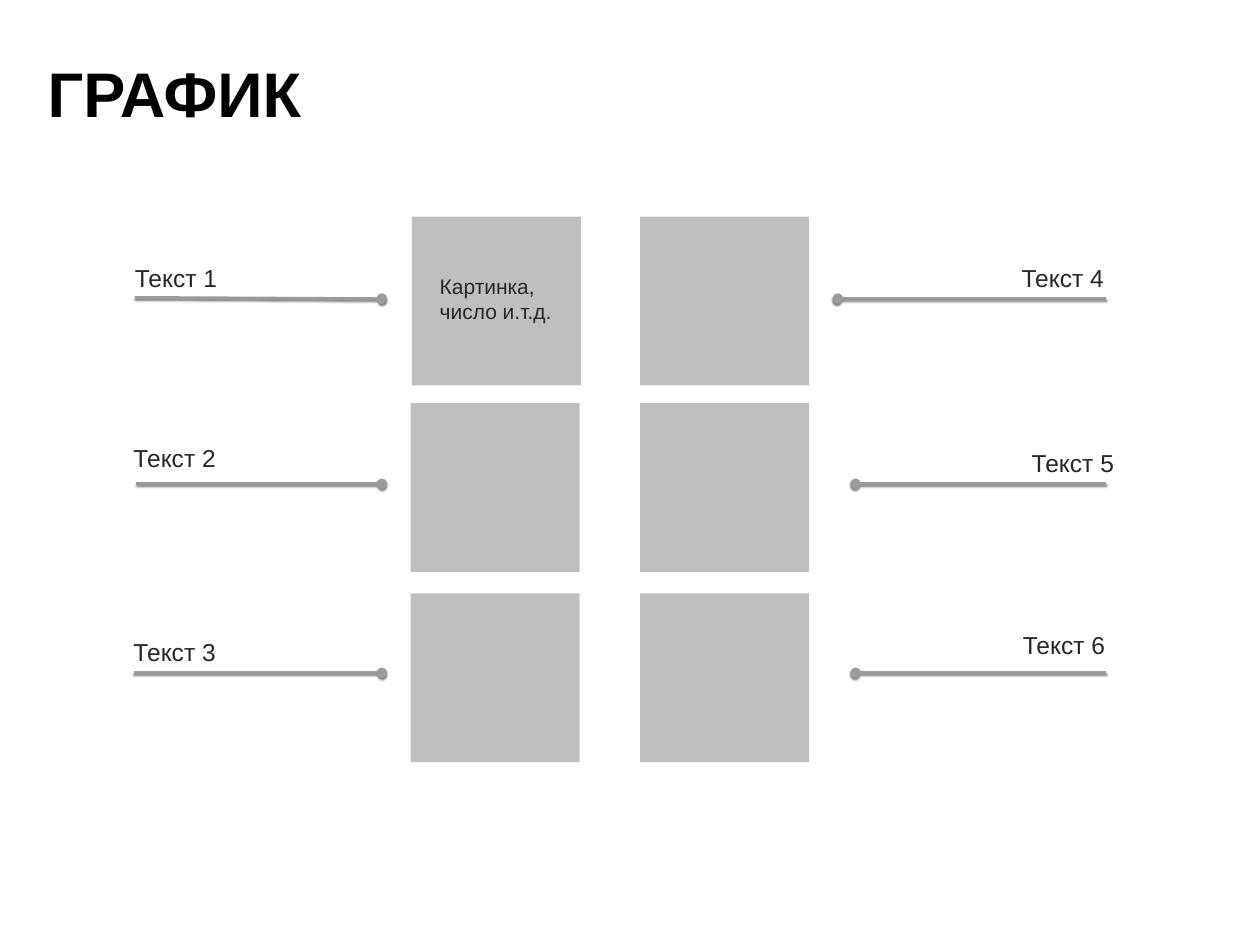
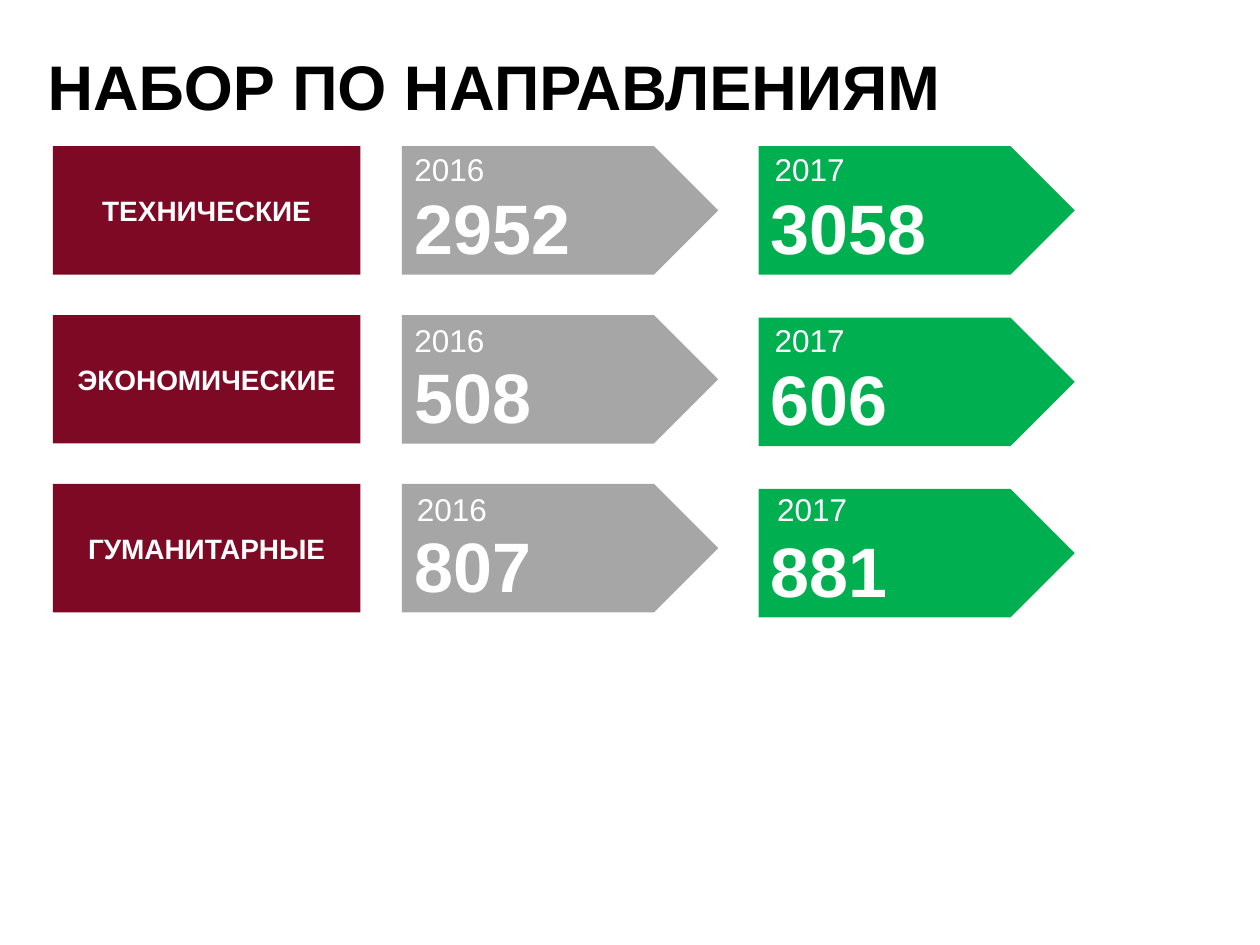
import pptx
import pptx.dml.color
import pptx.enum.shapes
import pptx.enum.text
import pptx.oxml
import pptx.util
from pptx.util import Inches

RGBColor = pptx.dml.color.RGBColor
BLACK = RGBColor(0x00, 0x00, 0x00)
WHITE = RGBColor(0xFF, 0xFF, 0xFF)
DARK_TEXT = RGBColor(0x26, 0x26, 0x26)
TILE_GRAY = RGBColor(0xBF, 0xBF, 0xBF)
LINE_GRAY = RGBColor(0x9B, 0x9B, 0x9B)
ARROW_GRAY = RGBColor(0xA6, 0xA6, 0xA6)
BURGUNDY = RGBColor(0x7D, 0x09, 0x25)
GREEN = RGBColor(0x00, 0xB0, 0x50)

SHAPES = pptx.enum.shapes.MSO_SHAPE
ALIGN = pptx.enum.text.PP_ALIGN
ANCHOR = pptx.enum.text.MSO_ANCHOR
NAMESPACE = 'xmlns:a="http://schemas.openxmlformats.org/drawingml/2006/main"'
OVAL_END = f'<a:tailEnd {NAMESPACE} type="oval"/>'
LINE_SHADOW = (
    f'<a:effectLst {NAMESPACE}>'
    '<a:outerShdw blurRad="12700" dist="12700" dir="5400000">'
    '<a:srgbClr val="000000"><a:alpha val="50000"/></a:srgbClr>'
    '</a:outerShdw></a:effectLst>'
)


class SlideBuilder:
    """Holds the shared style and the slide being drawn."""

    font_name = "Arial"
    title_size = 36
    title_left = 0.28

    def __init__(self, presentation):
        self.presentation = presentation
        self.slide = None

    def new_slide(self):
        blank_layout = self.presentation.slide_layouts[6]
        self.slide = self.presentation.slides.add_slide(blank_layout)

    def add_lines(self, frame, lines, size, color, bold=False, align=ALIGN.LEFT):
        for index, line in enumerate(lines):
            paragraph = frame.paragraphs[0] if index == 0 else frame.add_paragraph()
            paragraph.alignment = align
            run = paragraph.add_run()
            run.text = line
            run.font.name = self.font_name
            run.font.size = pptx.util.Pt(size)
            run.font.bold = bold
            run.font.color.rgb = color

    def text(self, left, top, width, height, lines, size, color, bold=False,
             align=ALIGN.LEFT, anchor=ANCHOR.TOP, wrap=True):
        box = self.slide.shapes.add_textbox(
            Inches(left), Inches(top), Inches(width), Inches(height))
        frame = box.text_frame
        frame.word_wrap = wrap
        frame.vertical_anchor = anchor
        self.add_lines(frame, lines, size, color, bold, align)
        return frame

    def title(self, top, width, height, title, line_spacing=1.0):
        frame = self.text(self.title_left, top, width, height, [title],
                          self.title_size, BLACK, bold=True)
        # Only the full-width title is tight enough to need wrapping off
        frame.word_wrap = line_spacing < 1
        frame.paragraphs[0].line_spacing = line_spacing

    def label(self, left, top, width, height, lines, size, align=ALIGN.LEFT):
        frame = self.text(left, top, width, height, lines, size, DARK_TEXT,
                          align=align, anchor=ANCHOR.BOTTOM)
        frame.margin_left = 0

    def shape(self, kind, left, top, width, height, fill, text=None, size=16,
              align=ALIGN.CENTER, anchor=ANCHOR.MIDDLE):
        shape = self.slide.shapes.add_shape(
            kind, Inches(left), Inches(top), Inches(width), Inches(height))
        shape.shadow.inherit = False
        shape.fill.solid()
        shape.fill.fore_color.rgb = fill
        shape.line.fill.background()
        if text:
            shape.text_frame.vertical_anchor = anchor
            self.add_lines(shape.text_frame, [text], size, WHITE, True, align)

    def pointer(self, start_x, start_y, end_x, end_y):
        connector = self.slide.shapes.add_connector(
            pptx.enum.shapes.MSO_CONNECTOR.STRAIGHT,
            Inches(start_x), Inches(start_y), Inches(end_x), Inches(end_y))
        connector.line.color.rgb = LINE_GRAY
        connector.line.width = pptx.util.Pt(1.5)
        properties = connector.element.spPr
        properties.get_or_add_ln().append(pptx.oxml.parse_xml(OVAL_END))
        properties.append(pptx.oxml.parse_xml(LINE_SHADOW))


def build_diagram(builder):
    builder.new_slide()
    builder.title(0.45, 3.63, 0.78, "ГРАФИК", line_spacing=0.9)

    # Two columns of square tiles
    tile_size = 1.34
    for row, top in enumerate((1.72, 3.2, 4.71)):
        first_left = 3.27 if row == 0 else 3.26
        for left in (first_left, 5.08):
            builder.shape(SHAPES.RECTANGLE, left, top, tile_size, tile_size, TILE_GRAY)
    builder.label(3.49, 2.12, 1.74, 0.5, ["Картинка,", "число и.т.д."], 12)

    # Captions: text, left, top, alignment
    captions = (
        ("Текст 1", 1.07, 2.03, ALIGN.LEFT),
        ("Текст 2", 1.06, 3.46, ALIGN.LEFT),
        ("Текст 3", 1.06, 5.0, ALIGN.LEFT),
        ("Текст 4", 7.12, 2.03, ALIGN.RIGHT),
        ("Текст 5", 7.2, 3.5, ALIGN.RIGHT),
        ("Текст 6", 7.13, 4.94, ALIGN.RIGHT),
    )
    for caption, left, top, align in captions:
        builder.label(left, top, 1.74, 0.34, [caption], 14, align)

    # Pointers from the outer edges towards the tiles
    pointer_rows = (
        (1.07, 2.36, 2.37, 6.65),
        (1.08, 3.84, 3.84, 6.79),
        (1.06, 5.34, 5.34, 6.79),
    )
    for left_start, left_y, y, right_end in pointer_rows:
        builder.pointer(left_start, left_y, 3.03, y)
        builder.pointer(8.78, y, right_end, y)


def build_enrolment(builder):
    builder.new_slide()
    builder.title(0.33, 7.36, 0.71, "НАБОР ПО НАПРАВЛЕНИЯМ")

    row_top, row_step, row_height = 1.16, 1.34, 1.02
    # Year, colour, arrow left, row step, year label left
    years = (
        ("2016", ARROW_GRAY, 3.19, row_step, 3.19),
        ("2017", GREEN, 6.02, 1.36, 6.05),
    )
    fields = (
        ("ТЕХНИЧЕСКИЕ", ("2952", "3058"), 1.14, 0),
        ("ЭКОНОМИЧЕСКИЕ", ("508", "606"), 2.5, 0),
        ("ГУМАНИТАРНЫЕ", ("807", "881"), 3.84, 0.02),
    )
    for row, (field, counts, year_top, year_shift) in enumerate(fields):
        builder.shape(SHAPES.RECTANGLE, 0.42, row_top + row * row_step, 2.44,
                      row_height, BURGUNDY, field)
        # Yearly figures
        for count, (year, color, left, step, year_left) in zip(counts, years):
            builder.shape(SHAPES.PENTAGON, left, row_top + row * step, 2.51,
                          row_height, color, count, 40, ALIGN.LEFT, ANCHOR.BOTTOM)
            builder.text(year_left + year_shift, year_top, 0.76, 0.4, [year], 18,
                         WHITE, wrap=False)


def main():
    presentation = pptx.Presentation()
    presentation.slide_width = Inches(10)
    presentation.slide_height = Inches(7.5)
    builder = SlideBuilder(presentation)
    build_diagram(builder)
    build_enrolment(builder)
    presentation.save("out.pptx")


if __name__ == "__main__":
    main()
